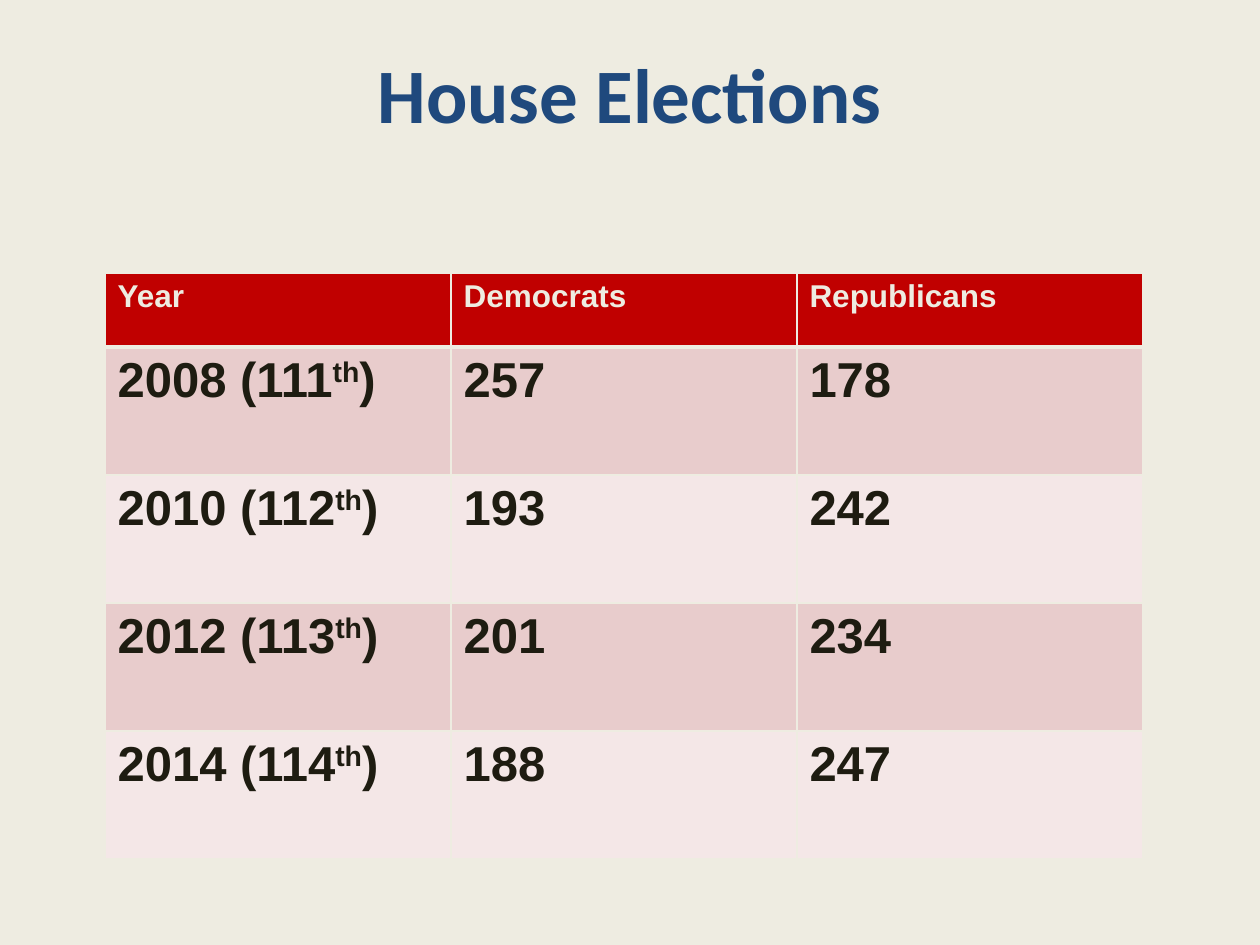
from dataclasses import dataclass

from lxml.etree import SubElement
from pptx import Presentation
from pptx.dml.color import RGBColor
from pptx.enum.text import MSO_ANCHOR as Anchor, PP_ALIGN as Align
from pptx.oxml.ns import qn
from pptx.util import Emu, Pt

SCALE = 914400 / 126
CREAM, NAVY, RED, INK = "EEECE1", "1F497D", "C00000", "1E1C11"
BANDS = ("E8CCCC", "F4E7E7")
HEADS = ("Year", "Democrats", "Republicans")


@dataclass
class Vote:
    year: int
    term: int
    dems: int
    reps: int


VOTES = (
    Vote(2008, 111, 257, 178),
    Vote(2010, 112, 193, 242),
    Vote(2012, 113, 201, 234),
    Vote(2014, 114, 188, 247),
)


def px(num: int) -> Emu:
    return Emu(round(num * SCALE))


def color(code: str) -> RGBColor:
    return RGBColor.from_string(code)


def write(frame, *parts: str, size: int, ink: str, face: str = "Arial",
          align=Align.LEFT) -> None:
    """Write the parts as bold runs, every second one raised."""
    para = frame.paragraphs[0]
    para.alignment = align
    for i, part in enumerate(parts):
        run = para.add_run()
        run.text = part
        font = run.font
        font.name, font.size, font.bold = face, Pt(size), True
        font.color.rgb = color(ink)
        if i % 2:
            run._r.get_or_add_rPr().set("baseline", "30000")


def border(cell, **widths: int) -> None:
    """Draw cell edges, given in points as L, R, T and B."""
    props = cell._tc.get_or_add_tcPr()
    for i, (side, width) in enumerate(widths.items()):
        line = SubElement(props, qn(f"a:ln{side}"), w=str(Pt(width)))
        fill = SubElement(line, qn("a:solidFill"))
        SubElement(fill, qn("a:srgbClr"), val=CREAM)
        props.insert(i, line)  # edges come before the fill


def draw_cell(cell, *parts: str, fill: str, size: int, ink: str,
              top: int = 1, base: int = 1) -> None:
    cell.fill.solid()
    cell.fill.fore_color.rgb = color(fill)
    border(cell, L=1, R=1, T=top, B=base)
    write(cell.text_frame, *parts, size=size, ink=ink)


def draw_title(slide, text: str) -> None:
    box = slide.shapes.add_textbox(px(63), px(38), px(1134), px(110))
    frame = box.text_frame
    frame.word_wrap = True
    frame.vertical_anchor = Anchor.MIDDLE
    write(frame, text, size=44, ink=NAVY, face="Calibri", align=Align.CENTER)


def draw_table(slide) -> None:
    table = slide.shapes.add_table(
        len(VOTES) + 1, len(HEADS), px(105), px(273), px(1039), px(588)).table
    for col in table.columns:
        col.width = px(346)
    for i, row in enumerate(table.rows):
        row.height = px(128 if i else 74)

    # Header row
    for i, head in enumerate(HEADS):
        draw_cell(table.cell(0, i), head, fill=RED, size=18, ink=CREAM, base=3)

    # One banded row per election
    for i, vote in enumerate(VOTES, 1):
        row = ((f"{vote.year} ({vote.term}", "th", ")"),
               (str(vote.dems),), (str(vote.reps),))
        for j, parts in enumerate(row):
            draw_cell(table.cell(i, j), *parts, fill=BANDS[(i - 1) % 2],
                      size=28, ink=INK, top=3 if i == 1 else 1)


def main() -> None:
    deck = Presentation()
    deck.slide_width, deck.slide_height = px(1260), px(945)
    slide = deck.slides.add_slide(deck.slide_layouts[6])
    slide.background.fill.solid()
    slide.background.fill.fore_color.rgb = color(CREAM)
    draw_title(slide, "House Elections")
    draw_table(slide)
    deck.save("out.pptx")


if __name__ == "__main__":
    main()
